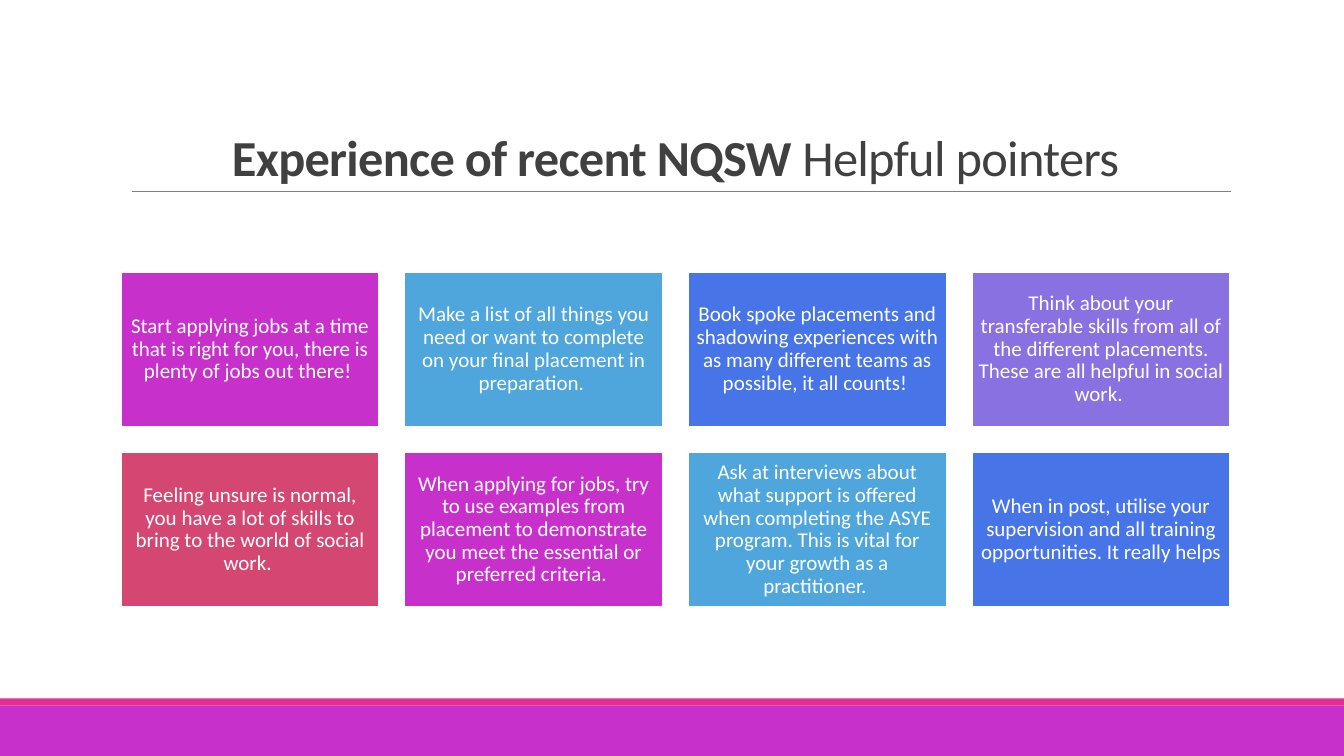
from pptx import Presentation
from pptx.dml.color import RGBColor
from pptx.enum.shapes import MSO_CONNECTOR, MSO_SHAPE
from pptx.enum.text import MSO_ANCHOR, PP_ALIGN
from pptx.oxml.ns import qn
from pptx.util import Inches, Pt
from lxml import etree

RECTANGLE = MSO_SHAPE.RECTANGLE
STRAIGHT = MSO_CONNECTOR.STRAIGHT
MIDDLE = MSO_ANCHOR.MIDDLE
BOTTOM = MSO_ANCHOR.BOTTOM
CENTER = PP_ALIGN.CENTER

MAGENTA = RGBColor(0xC8, 0x30, 0xCC)
PINK = RGBColor(0xE3, 0x2D, 0x91)
SKY = RGBColor(0x4E, 0xA6, 0xDC)
BLUE = RGBColor(0x47, 0x75, 0xE7)
VIOLET = RGBColor(0x89, 0x71, 0xE1)
ROSE = RGBColor(0xD5, 0x47, 0x73)
WHITE = RGBColor(0xFF, 0xFF, 0xFF)
DARK = RGBColor(0x40, 0x40, 0x40)
GRAY = RGBColor(0x80, 0x80, 0x80)

FONT = "Calibri"
SLIDE_WIDTH, SLIDE_HEIGHT = 13.33, 7.5
COLUMNS = 4
CARD_WIDTH, CARD_HEIGHT = 2.56, 1.53
CARD_COLORS = [MAGENTA, SKY, BLUE, VIOLET, ROSE]
POINTERS = [
    "Start applying jobs at a time that is right for you, there is plenty of jobs out there! ",
    "Make a list of all things you need or want to complete on your final placement in preparation. ",
    "Book spoke placements and shadowing experiences with as many different teams as possible, it all counts! ",
    "Think about your transferable skills from all of the different placements. "
    "These are all helpful in social work. ",
    "Feeling unsure is normal, you have a lot of skills to bring to the world of social work. ",
    "When applying for jobs, try to use examples from placement to demonstrate "
    "you meet the essential or preferred criteria. ",
    "Ask at interviews about what support is offered when completing the ASYE program. "
    "This is vital for your growth as a practitioner. ",
    "When in post, utilise your supervision and all training opportunities. It really helps",
]


def add_run(paragraph, text, size, color, bold=False):
    run = paragraph.add_run()
    run.text = text
    run.font.name = FONT
    run.font.size = Pt(size)
    run.font.color.rgb = color
    run.font.bold = bold
    return run


def add_rectangle(slide, left, top, width, height, color):
    shape = slide.shapes.add_shape(
        RECTANGLE, Inches(left), Inches(top), Inches(width), Inches(height))
    shape.shadow.inherit = False
    shape.fill.solid()
    shape.fill.fore_color.rgb = color
    shape.line.fill.background()
    return shape


def add_footer(slide, left, top, width, height):
    stripe_height = 0.07
    add_rectangle(slide, left, top + stripe_height, width, height - stripe_height, MAGENTA)
    add_rectangle(slide, left, top, width, stripe_height, PINK)


def add_title(slide, left, top, width, height):
    rule_top = Inches(top + height)
    rule = slide.shapes.add_connector(
        STRAIGHT, Inches(left + 0.11), rule_top, Inches(left + width + 0.01), rule_top)
    rule.line.color.rgb = GRAY
    rule.line.width = Pt(0.5)
    etree.SubElement(rule._element.spPr, qn("a:effectLst"))

    title = slide.shapes.add_textbox(
        Inches(left), Inches(top), Inches(width), Inches(height))
    frame = title.text_frame
    frame.word_wrap = True
    frame.vertical_anchor = BOTTOM
    paragraph = frame.paragraphs[0]
    paragraph.alignment = CENTER
    paragraph.line_spacing = 0.85
    for text, bold in [("Experience of recent NQSW ", True), ("Helpful pointers", False)]:
        run = add_run(paragraph, text, 36, DARK, bold)
        run._r.get_or_add_rPr().set("spc", "-50")


def add_card(slide, left, top, width, height, text, color):
    card = add_rectangle(slide, left, top, width, height, color)
    card.line.color.rgb = WHITE
    card.line.width = Pt(0.85)
    frame = card.text_frame
    frame.word_wrap = True
    frame.vertical_anchor = MIDDLE
    frame.margin_left = frame.margin_right = Inches(0.06)
    frame.margin_top = frame.margin_bottom = Inches(0.06)
    paragraph = frame.paragraphs[0]
    paragraph.alignment = CENTER
    paragraph.line_spacing = 0.9
    add_run(paragraph, text, 15, WHITE)


def add_card_grid(slide, left, top, width, height):
    rows = len(POINTERS) // COLUMNS
    column_step = (width - CARD_WIDTH) / (COLUMNS - 1)
    row_step = (height - CARD_HEIGHT) / (rows - 1)
    for index, text in enumerate(POINTERS):
        row, column = divmod(index, COLUMNS)
        color = CARD_COLORS[index % len(CARD_COLORS)]
        add_card(slide, left + column * column_step, top + row * row_step,
                 CARD_WIDTH, CARD_HEIGHT, text, color)


def main():
    presentation = Presentation()
    presentation.slide_width = Inches(SLIDE_WIDTH)
    presentation.slide_height = Inches(SLIDE_HEIGHT)
    slide = presentation.slides.add_slide(presentation.slide_layouts[6])
    add_footer(slide, 0, 6.93, SLIDE_WIDTH, 0.57)
    add_title(slide, 1.2, 1.06, 11, 0.84)
    add_card_grid(slide, 1.2, 2.7, 11, 3.32)
    presentation.save("out.pptx")


if __name__ == "__main__":
    main()
